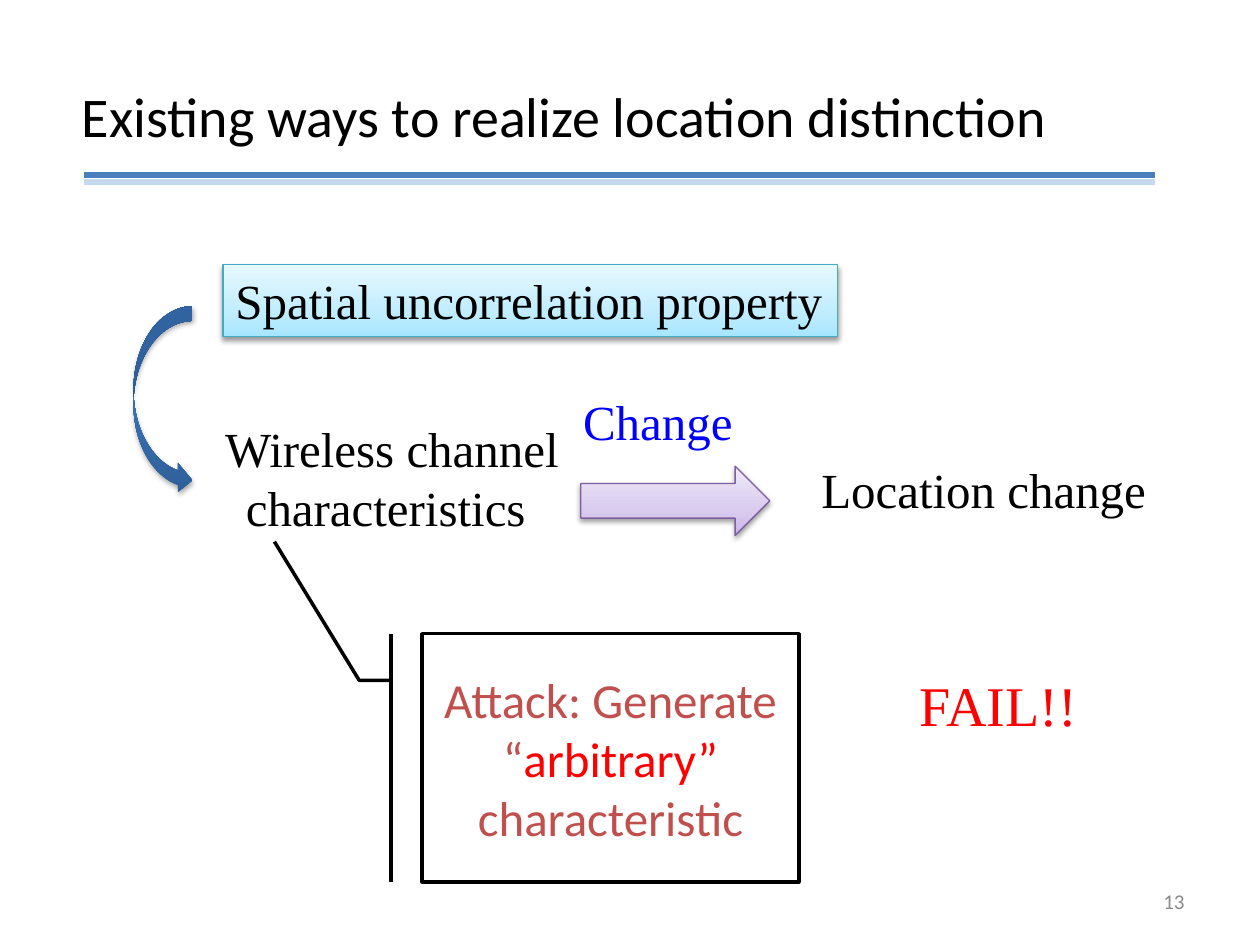
from lxml import etree
from pptx import Presentation
from pptx.dml.color import RGBColor
from pptx.enum.shapes import MSO_CONNECTOR, MSO_SHAPE
from pptx.enum.text import MSO_ANCHOR, PP_ALIGN
from pptx.oxml.ns import qn
from pptx.util import Inches, Pt

LEFT, CENTER, RIGHT = PP_ALIGN.LEFT, PP_ALIGN.CENTER, PP_ALIGN.RIGHT
TOP, MIDDLE = MSO_ANCHOR.TOP, MSO_ANCHOR.MIDDLE
SERIF, SANS = "Times New Roman", "Calibri"
COLORS = {
    "black": "000000", "white": "FFFFFF", "blue": "0000FF", "red": "FF0000",
    "brick": "C0504D", "gray": "898989", "rule": "4B7EBC", "rule_shadow": "C6D9F1",
    "purple": "7D60A0", "teal": "46AAC5",
}
GRADIENTS = {
    "purple": [(0, "C9B5E8"), (35, "D8CBEE"), (100, "F0EAF9")],
    "teal": [(0, "A7E6FF"), (35, "C1EDFF"), (100, "E7F8FF")],
    "navy": [(0, "2F5F99"), (80, "3D7CC7"), (100, "3A7CCB")],
}


def write(shape, spans, size, font, align=LEFT, anchor=TOP):
    frame = shape.text_frame
    frame.word_wrap = True
    frame.vertical_anchor = anchor
    para = frame.paragraphs[0]
    para.alignment = align
    for text, color in spans:
        span = para.add_run()
        span.text = text
        for name, value in {"size": Pt(size), "name": font}.items():
            setattr(span.font, name, value)
        span.font.color.rgb = RGBColor.from_string(COLORS[color])


def add_shadow(shape, color, alpha, blur, distance):
    properties = shape._element.spPr
    effects = properties.find(qn("a:effectLst"))
    if effects is None:
        effects = etree.SubElement(properties, qn("a:effectLst"))
    shadow = etree.SubElement(effects, qn("a:outerShdw"), blurRad=str(Pt(blur)),
                              dist=str(Pt(distance)), dir="5400000", rotWithShape="0")
    tint = etree.SubElement(shadow, qn("a:srgbClr"), val=COLORS[color])
    etree.SubElement(tint, qn("a:alpha"), val=str(alpha * 1000))


deck = Presentation()
deck.slide_width, deck.slide_height = Inches(10), Inches(7.5)
page = deck.slides.add_slide(deck.slide_layouts[5])
shapes = page.shapes

title = shapes.title
title.left, title.top, title.width, title.height = map(Inches, (0.55, 0.36, 8.07, 1.1))
title.fill.solid()
title.fill.fore_color.rgb = RGBColor.from_string(COLORS["white"])
write(title, [("Existing ways to realize location distinction", "black")], 32, SANS, LEFT, MIDDLE)

rule = shapes.add_connector(MSO_CONNECTOR.STRAIGHT, Inches(0.67), Inches(1.39), Inches(9.17), Inches(1.39))
rule.line.color.rgb = RGBColor.from_string(COLORS["rule"])
rule.line.width = Pt(3.25)
add_shadow(rule, "rule_shadow", 100, 0, 4)

gradient_shapes = {}
for name, kind, place, gradient, outline, alpha, distance in [
    ("change arrow", MSO_SHAPE.RIGHT_ARROW, (4.61, 3.7, 1.5, 0.55), "purple", "purple", 38, 1.6),
    ("property", MSO_SHAPE.RECTANGLE, (1.77, 2.1, 4.88, 0.57), "teal", "teal", 38, 1.6),
    ("curved arrow", MSO_SHAPE.CURVED_RIGHT_ARROW, (1.06, 2.43, 0.47, 1.5), "navy", None, 35, 1.8),
]:
    shape = shapes.add_shape(kind, *map(Inches, place))
    shape.fill.gradient()
    shape.fill.gradient_angle = 90
    stops = shape._element.spPr.find(qn("a:gradFill")).find(qn("a:gsLst"))
    for stop in list(stops):
        stops.remove(stop)
    for position, color in GRADIENTS[gradient]:
        stop = etree.SubElement(stops, qn("a:gs"), pos=str(position * 1000))
        etree.SubElement(stop, qn("a:srgbClr"), val=color)
    if outline:
        shape.line.color.rgb = RGBColor.from_string(COLORS[outline])
        shape.line.width = Pt(0.75)
    else:
        shape.line.fill.background()
    shape.shadow.inherit = False
    add_shadow(shape, "black", alpha, 3.1, distance)
    gradient_shapes[name] = shape
write(gradient_shapes["property"], [("Spatial uncorrelation property", "black")], 28, SERIF)

callout = shapes.add_shape(MSO_SHAPE.LINE_CALLOUT_2_BORDER_AND_ACCENT_BAR,
                           Inches(3.35), Inches(5.03), Inches(2.99), Inches(1.97))
for index, value in enumerate((0.188, -0.083, 0.188, -0.167, -0.371, -0.392)):
    callout.adjustments[index] = value
callout.fill.solid()
callout.fill.fore_color.rgb = RGBColor.from_string(COLORS["white"])
callout.line.color.rgb = RGBColor.from_string(COLORS["black"])
callout.line.width = Pt(2)
callout.shadow.inherit = False
write(callout, [("Attack: Generate “", "brick"), ("arbitrary” ", "red"), ("characteristic", "brick")],
      28, SANS, CENTER, MIDDLE)

for text, place, color, size, font, align, anchor in [
    ("Wireless channel characteristics ", (1.3, 3.27, 3.62, 1.04), "black", 28, SERIF, CENTER, TOP),
    ("Change", (4.53, 3.06, 1.73, 0.57), "blue", 28, SERIF, LEFT, TOP),
    ("Location change", (6.42, 3.6, 3.31, 0.57), "black", 28, SERIF, LEFT, TOP),
    ("FAIL!!", (7.2, 5.27, 2.13, 0.64), "red", 32, SERIF, LEFT, TOP),
    ("13", (7.17, 6.95, 2.33, 0.4), "gray", 12, SANS, RIGHT, MIDDLE),
]:
    box = shapes.add_textbox(*map(Inches, place))
    write(box, [(text, color)], size, font, align, anchor)

deck.save("out.pptx")
